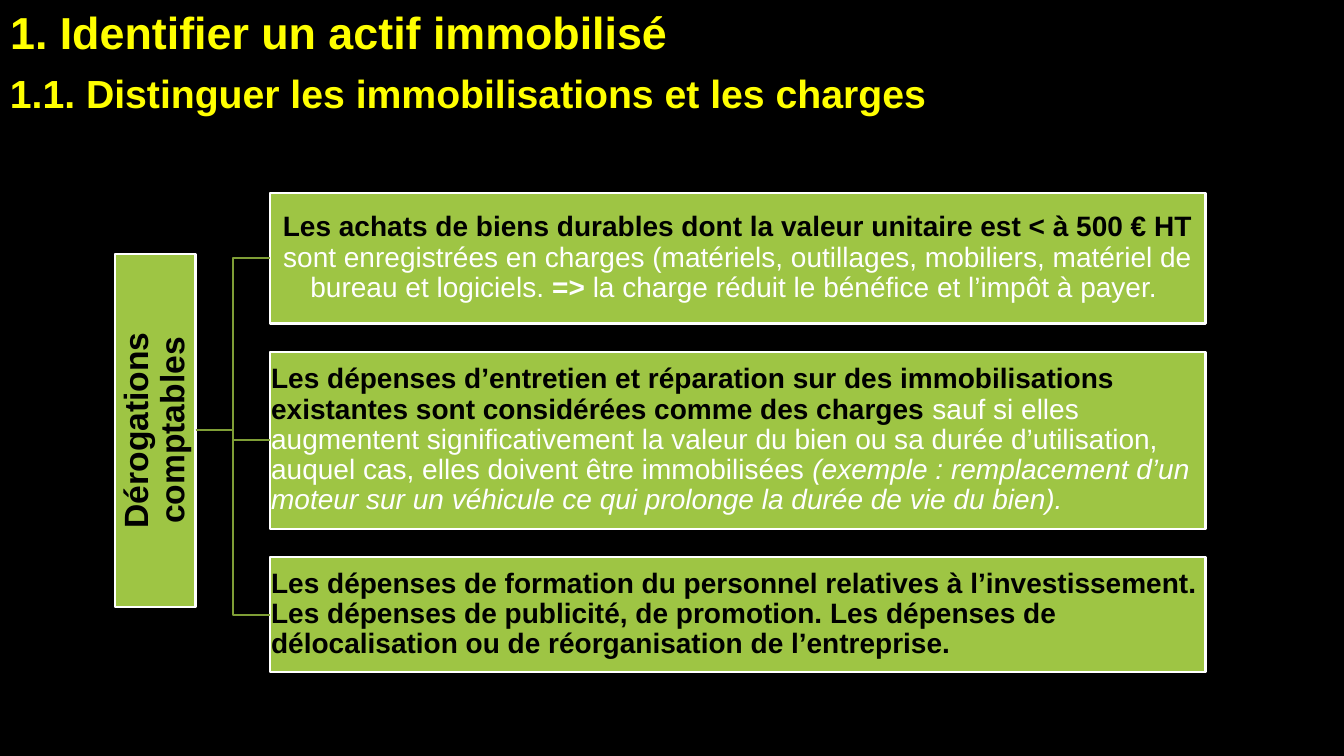
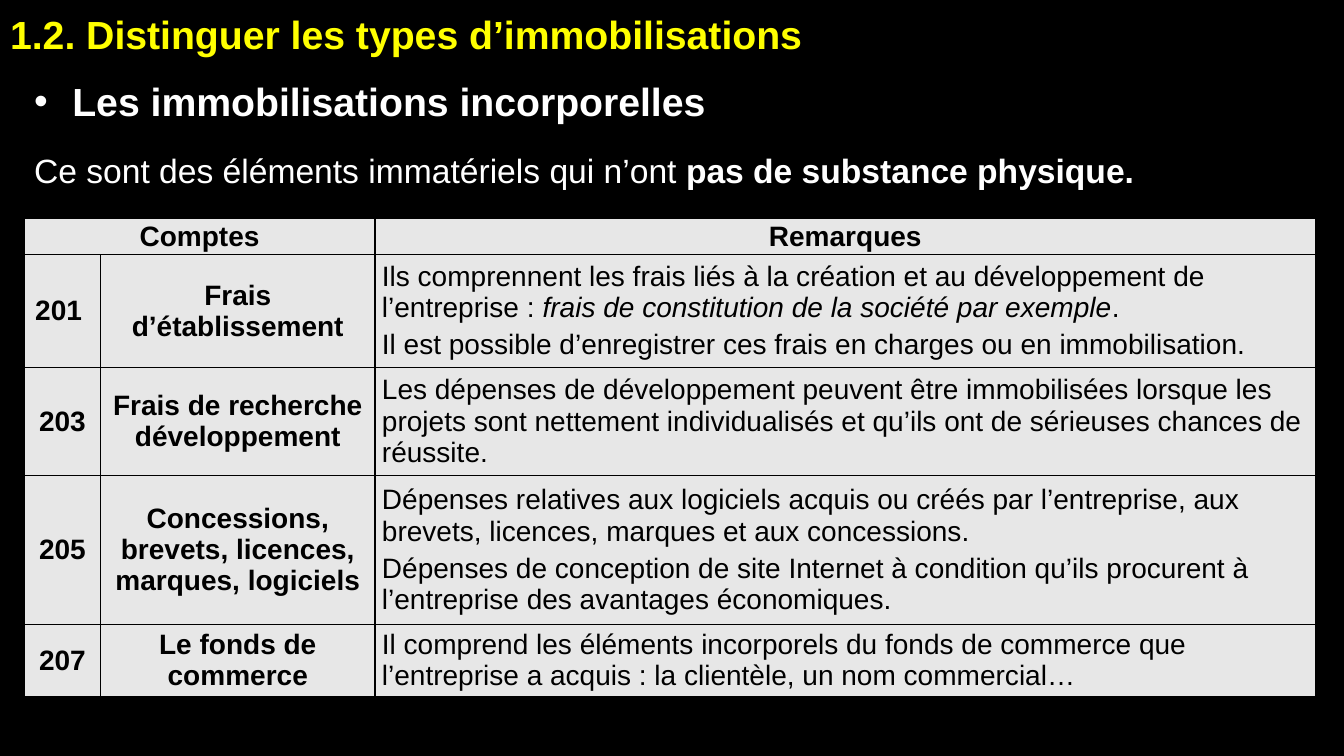
"""Build two slides on recognising fixed assets."""
from lxml import etree
from pptx import Presentation
from pptx.dml.color import RGBColor
from pptx.enum.shapes import MSO_CONNECTOR, MSO_SHAPE
from pptx.enum.text import MSO_ANCHOR, MSO_AUTO_SIZE, PP_ALIGN
from pptx.oxml.ns import qn
from pptx.util import Inches, Pt

ELBOW = MSO_CONNECTOR.ELBOW
RECT = MSO_SHAPE.RECTANGLE
TOP, MIDDLE = MSO_ANCHOR.TOP, MSO_ANCHOR.MIDDLE
NONE = MSO_AUTO_SIZE.NONE
LEFT, CENTER = PP_ALIGN.LEFT, PP_ALIGN.CENTER

FONT = "Arial"
HEX = {
    "back": "000000", "title": "FFFF00", "light": "FFFFFF", "dark": "000000",
    "box": "9EC544", "link": "7F9E36", "cell": "E7E7E7",
}
RGB = {name: RGBColor.from_string(code) for name, code in HEX.items()}

deck = Presentation()
deck.slide_width, deck.slide_height = Inches(13.33), Inches(7.5)
fill = deck.slide_master.background.fill
fill.solid()
fill.fore_color.rgb = RGB["back"]


def area(left, top, width, height):
    """Turn percentages of the slide into lengths."""
    wide, high = deck.slide_width / 100, deck.slide_height / 100
    return int(left * wide), int(top * high), int(width * wide), int(height * high)


def write(para, size, runs, align=LEFT, before=0, after=0):
    """Fill a paragraph with (text, colour, marks) runs; b is bold, i italic."""
    para.alignment = align
    para.space_before, para.space_after = Pt(before), Pt(after)
    for text, color, marks in runs:
        run = para.add_run()
        run.text = text
        font = run.font
        font.name, font.size = FONT, Pt(size)
        font.bold, font.italic = "b" in marks, "i" in marks
        font.color.rgb = RGB[color]


HEADS = [
    ("1. Identifier un actif immobilisé", 32, 3, 3, (0, 0, 96.9, 8.5)),
    ("1.2. Distinguer les types d’immobilisations", 28, 12, 6, (0, 0.7, 83.3, 7.6)),
]
slides = []
for text, size, before, after, spot in HEADS:
    slide = deck.slides.add_slide(deck.slide_layouts[5])
    title = slide.shapes.title
    title.left, title.top, title.width, title.height = area(*spot)
    frame = title.text_frame
    frame.vertical_anchor, frame.auto_size = TOP, NONE
    write(frame.paragraphs[0], size, [(text, "title", "b")], LEFT, before, after)
    slides.append(slide)
first, second = slides

frame = first.shapes.add_textbox(*area(0, 8.5, 83.3, 7.6)).text_frame
frame.word_wrap = True
text = "1.1. Distinguer les immobilisations et les charges"
write(frame.paragraphs[0], 28, [(text, "title", "b")], LEFT, 12, 6)

GAP = 3.75
BOXES = [
    (17.3, CENTER, [
        ("Les achats de biens durables dont la valeur unitaire est < à 500 € HT ", "dark", "b"),
        ("sont enregistrées en charges (matériels, outillages, mobiliers, matériel de "
         "bureau et logiciels. ", "light", ""),
        ("=> ", "light", "b"),
        ("la charge réduit le bénéfice et l’impôt à payer. ", "light", ""),
    ]),
    (23.4, LEFT, [
        ("Les dépenses d’entretien et réparation sur des immobilisations existantes "
         "sont considérées comme des charges ", "dark", "b"),
        ("sauf si elles augmentent significativement la valeur du bien ou sa durée "
         "d’utilisation, auquel cas, elles doivent être immobilisées ", "light", ""),
        ("(exemple : remplacement d’un moteur sur un véhicule ce qui prolonge "
         "la durée de vie du bien).", "light", "i"),
    ]),
    (15.2, LEFT, [
        ("Les dépenses de formation du personnel relatives à l’investissement. "
         "Les dépenses de publicité, de promotion. Les dépenses de délocalisation "
         "ou de réorganisation de l’entreprise.", "dark", "b"),
    ]),
]
panels = [((8.55, 33.6, 6, 46.67), 24, 0.02, CENTER, [("Dérogations comptables", "dark", "b")])]
top = 25.5
for high, align, runs in BOXES:
    panels.append(((20.1, top, 69.6, high), 20, 0.01, align, runs))
    top += high + GAP

nodes = []
for spot, size, inset, align, runs in panels:
    node = first.shapes.add_shape(RECT, *area(*spot))
    node.shadow.inherit = False
    node.fill.solid()
    node.fill.fore_color.rgb = RGB["box"]
    node.line.color.rgb = RGB["light"]
    node.line.width = Pt(1.5)
    frame = node.text_frame
    frame.word_wrap, frame.vertical_anchor = True, MIDDLE
    frame.margin_left = frame.margin_right = Inches(inset)
    frame.margin_top = frame.margin_bottom = Inches(inset)
    para = frame.paragraphs[0]
    write(para, size, runs, align)
    para.line_spacing = 0.9
    nodes.append(node)

label, *boxes = nodes
label.text_frame._txBody.bodyPr.set("vert", "vert270")
for box in boxes:
    link = first.shapes.add_connector(ELBOW, 0, 0, 0, 0)
    link.begin_connect(label, 3)
    link.end_connect(box, 1)
    link.line.color.rgb = RGB["link"]
    link.line.width = Pt(1.5)
    etree.SubElement(link._element.spPr, qn("a:effectLst"))

frame = second.shapes.add_textbox(*area(1.8, 9.6, 94.2, 16.4)).text_frame
frame.word_wrap = True
point = frame.paragraphs[0]
write(point, 28, [("Les immobilisations incorporelles", "light", "b")], LEFT, 12)
props = point._p.get_or_add_pPr()
props.set("marL", str(Inches(0.38)))
props.set("indent", str(-Inches(0.38)))
etree.SubElement(props, qn("a:buFont")).set("typeface", FONT)
etree.SubElement(props, qn("a:buChar")).set("char", "•")
write(frame.add_paragraph(), 24, [
    ("Ce sont des éléments immatériels qui n’ont ", "light", ""),
    ("pas de substance physique.", "light", "b"),
], LEFT, 18, 6)

COLS = [5.7, 20.4, 70]
ROWS = [
    (4.8, "Comptes", "", []),
    (14.9, "201 ", "Frais d’établissement", [
        [("Ils comprennent les frais liés à la création et au développement de "
          "l’entreprise : ", "dark", ""),
         ("frais de constitution de la société par exemple", "dark", "i"),
         (".", "dark", "")],
        [("Il est possible d’enregistrer ces frais en charges ou en immobilisation.",
          "dark", "")],
    ]),
    (14.3, "203", "Frais de recherche développement", [
        [("Les dépenses de développement peuvent être immobilisées lorsque les projets "
          "sont nettement individualisés et qu’ils ont de sérieuses chances de réussite.",
          "dark", "")],
    ]),
    (19.7, "205", "Concessions, brevets, licences, marques, logiciels", [
        [("Dépenses relatives aux logiciels acquis ou créés par l’entreprise, aux "
          "brevets, licences, marques et aux concessions.", "dark", "")],
        [("Dépenses de conception de site Internet à condition qu’ils procurent à "
          "l’entreprise des avantages économiques.", "dark", "")],
    ]),
    (9.5, "207", "Le fonds de commerce", [
        [("Il comprend les éléments incorporels du fonds de commerce que l’entreprise "
          "a acquis : la clientèle, un nom commercial…", "dark", "")],
    ]),
]
spot = area(1.8, 28.9, sum(COLS), sum(row[0] for row in ROWS))
table = second.shapes.add_table(len(ROWS), len(COLS), *spot).table
table.first_row = table.horz_banding = False
table.cell(0, 0).merge(table.cell(0, 1))
for col, wide in zip(table.columns, COLS):
    col.width = area(0, 0, wide, 0)[2]
for row, data in zip(table.rows, ROWS):
    row.height = area(0, 0, 0, data[0])[3]

for cell in table.iter_cells():
    cell.vertical_anchor = MIDDLE
    cell.margin_left = cell.margin_right = Inches(0.07)
    cell.margin_top = cell.margin_bottom = 0
    props = cell._tc.get_or_add_tcPr()
    for side in ("lnL", "lnR", "lnT", "lnB"):
        edge = etree.SubElement(props, qn("a:" + side), w=str(Pt(1)))
        paint = etree.SubElement(edge, qn("a:solidFill"))
        etree.SubElement(paint, qn("a:srgbClr"), val=HEX["dark"])
    cell.fill.solid()
    cell.fill.fore_color.rgb = RGB["cell"]

heads = [(0, 2, "Remarques")]
for num, (high, code, name, notes) in enumerate(ROWS):
    heads += [(num, 0, code), (num, 1, name)]
    frame = table.cell(num, 2).text_frame
    for pos, runs in enumerate(notes):
        para = frame.add_paragraph() if pos else frame.paragraphs[0]
        write(para, 20, runs, LEFT, 2, 2)
for num, col, text in heads:
    if text:
        para = table.cell(num, col).text_frame.paragraphs[0]
        write(para, 20, [(text, "dark", "b")], CENTER, 6)

deck.save("out.pptx")
